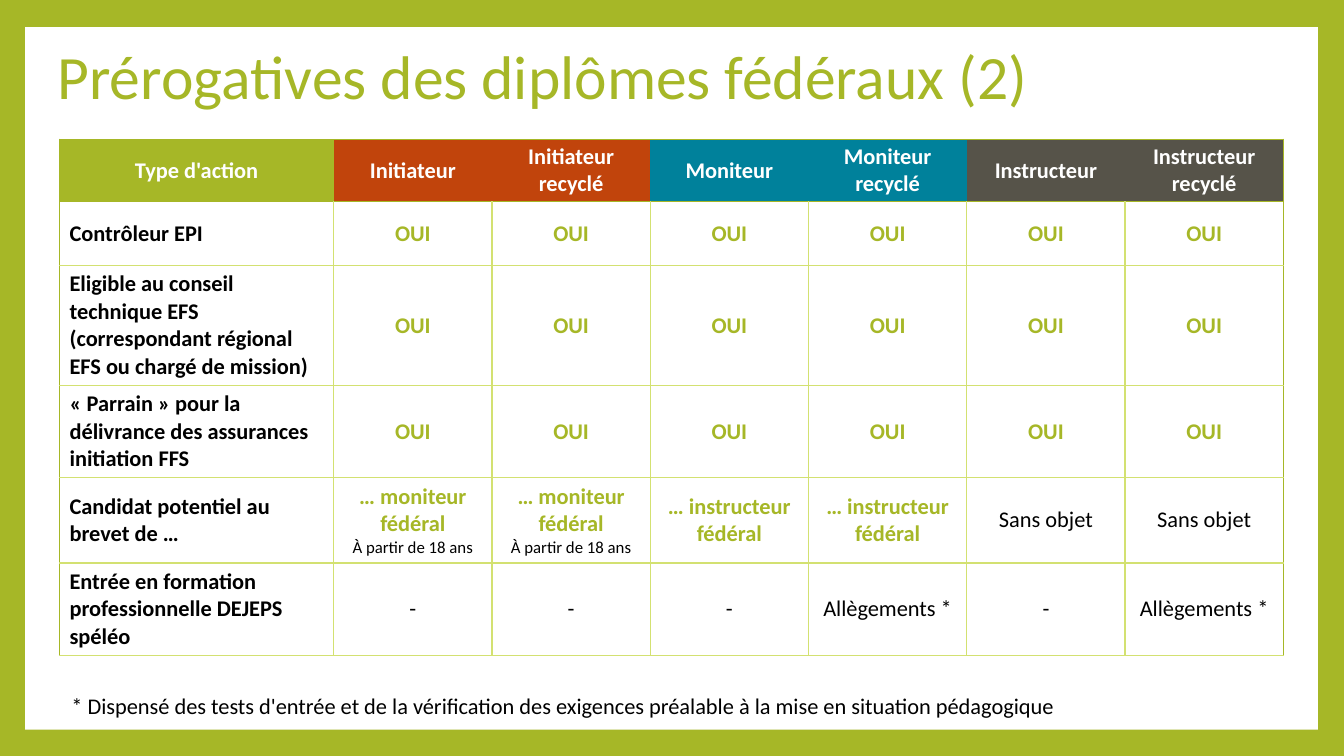
"""Builds the slide on the prerogatives of federal diplomas."""
from dataclasses import dataclass

from lxml import etree
from pptx import Presentation
from pptx.dml.color import RGBColor
from pptx.enum.shapes import MSO_SHAPE
from pptx.enum.text import MSO_ANCHOR, MSO_AUTO_SIZE, PP_ALIGN
from pptx.oxml.ns import qn
from pptx.util import Inches, Pt

RECTANGLE = MSO_SHAPE.RECTANGLE
MIDDLE = MSO_ANCHOR.MIDDLE
LEFT, CENTER = PP_ALIGN.LEFT, PP_ALIGN.CENTER
FIT_SHAPE, NO_FIT = MSO_AUTO_SIZE.SHAPE_TO_FIT_TEXT, MSO_AUTO_SIZE.NONE


@dataclass(frozen=True)
class Theme:
    font: str = "Calibri"
    green: str = "A6B727"
    grid: str = "D3E171"
    orange: str = "C1440C"
    blue: str = "00819B"
    grey: str = "565349"
    white: str = "FFFFFF"
    black: str = "000000"
    title_size: int = 44
    text_size: int = 16
    note_size: int = 12
    edge_width: float = 0.79
    grid_width: float = 1


THEME = Theme()
TITLE = "Prérogatives des diplômes fédéraux (2)"
FOOTNOTE = ("* Dispensé des tests d'entrée et de la vérification des exigences "
            "préalable à la mise en situation pédagogique")
HEADERS = [
    ("Type d'action", THEME.green),
    ("Initiateur", THEME.orange), ("Initiateur recyclé", THEME.orange),
    ("Moniteur", THEME.blue), ("Moniteur recyclé", THEME.blue),
    ("Instructeur", THEME.grey), ("Instructeur recyclé", THEME.grey),
]
MONITOR = "… moniteur fédéral\nÀ partir de 18 ans"
INSTRUCTOR = "… instructeur fédéral"
ACTIONS = [
    ("Contrôleur EPI", ["OUI"] * 6),
    ("Eligible au conseil technique EFS (correspondant régional "
     "EFS ou chargé de mission)", ["OUI"] * 6),
    ("« Parrain » pour la délivrance des assurances initiation FFS", ["OUI"] * 6),
    ("Candidat potentiel au brevet de …",
     [MONITOR] * 2 + [INSTRUCTOR] * 2 + ["Sans objet"] * 2),
    ("Entrée en formation professionnelle DEJEPS spéléo",
     ["-", "-", "-", "Allègements *", "-", "Allègements *"]),
]
COL_WIDTHS = [2.72] + [1.57] * 6
ROW_HEIGHTS = [0.61, 0.63, 1.19, 0.91, 0.84, 0.91]
HEADER_MARGINS = {"margin_left": 0.06, "margin_right": 0.06,
                  "margin_top": 0.04, "margin_bottom": 0.04}
EDGE = (THEME.green, THEME.edge_width)
GRID = (THEME.grid, THEME.grid_width)


def set_attrs(target, **values):
    for name, value in values.items():
        setattr(target, name, value)


def write(p, text, color, size=THEME.text_size, bold=False, align=LEFT):
    p.alignment = align
    r = p.add_run()
    r.text = text
    set_attrs(r.font, name=THEME.font, size=Pt(size), bold=bold)
    r.font.color.rgb = RGBColor.from_string(color)


def paint(fill, color):
    fill.solid()
    fill.fore_color.rgb = RGBColor.from_string(color)


def set_borders(cell, borders):
    tc_pr = cell._tc.get_or_add_tcPr()
    for side in "LRTB":
        ln = etree.SubElement(tc_pr, qn(f"a:ln{side}"))
        if borders[side] is None:
            etree.SubElement(ln, qn("a:noFill"))
            continue
        color, width = borders[side]
        ln.set("w", str(Pt(width)))
        solid = etree.SubElement(ln, qn("a:solidFill"))
        etree.SubElement(solid, qn("a:srgbClr"), val=color)


def cell_borders(row, col):
    inner = GRID if row else None
    return {"L": inner if col else EDGE,
            "R": EDGE if col == len(COL_WIDTHS) - 1 else inner,
            "T": GRID if row > 1 else EDGE,
            "B": GRID if row else EDGE}


def fill_header(cell, text, color):
    set_attrs(cell, **{k: Inches(v) for k, v in HEADER_MARGINS.items()})
    paint(cell.fill, color)
    write(cell.text_frame.paragraphs[0], text, THEME.white, bold=True, align=CENTER)


def fill_action(cell, text):
    cell.fill.background()
    write(cell.text_frame.paragraphs[0], text, THEME.black, bold=True)


def fill_right(cell, text):
    cell.fill.background()
    main, *notes = text.split("\n")
    granted = main == "OUI" or main.startswith("…")
    tf = cell.text_frame
    write(tf.paragraphs[0], main, THEME.green if granted else THEME.black,
          bold=granted, align=CENTER)
    for note in notes:
        write(tf.add_paragraph(), note, THEME.black, THEME.note_size, align=CENTER)


def add_title(s):
    title = s.shapes.title
    set_attrs(title, left=Inches(0.47), top=Inches(0.4),
              width=Inches(12.44), height=Inches(0.78))
    tf = title.text_frame
    set_attrs(tf, word_wrap=True, auto_size=NO_FIT, vertical_anchor=MIDDLE)
    p = tf.paragraphs[0]
    p.line_spacing = 0.9
    write(p, TITLE, THEME.green, THEME.title_size)


def add_panel(s):
    paint(s.background.fill, THEME.green)
    sp = s.shapes.add_shape(RECTANGLE, Inches(0.25), Inches(0.27),
                            Inches(12.82), Inches(6.97))
    sp.shadow.inherit = False
    paint(sp.fill, THEME.white)
    sp.line.fill.background()
    s.shapes.title._element.addprevious(sp._element)


def add_rights_table(s):
    table = s.shapes.add_table(
        len(ROW_HEIGHTS), len(COL_WIDTHS), Inches(0.59), Inches(1.38),
        Inches(sum(COL_WIDTHS)), Inches(sum(ROW_HEIGHTS))).table
    table.horz_banding = False
    for column, width in zip(table.columns, COL_WIDTHS):
        column.width = Inches(width)
    for row, height in zip(table.rows, ROW_HEIGHTS):
        row.height = Inches(height)
    for i, row in enumerate(table.rows):
        for j, cell in enumerate(row.cells):
            cell.vertical_anchor = MIDDLE
            set_borders(cell, cell_borders(i, j))
    for j, (text, color) in enumerate(HEADERS):
        fill_header(table.cell(0, j), text, color)
    for i, (action, rights) in enumerate(ACTIONS, 1):
        fill_action(table.cell(i, 0), action)
        for j, right in enumerate(rights, 1):
            fill_right(table.cell(i, j), right)


def add_footnote(s):
    sp = s.shapes.add_textbox(Inches(0.61), Inches(6.82), Inches(10.17), Inches(0.37))
    tf = sp.text_frame
    set_attrs(tf, word_wrap=False, auto_size=FIT_SHAPE)
    write(tf.paragraphs[0], FOOTNOTE, THEME.black)


def main():
    prs = Presentation()
    set_attrs(prs, slide_width=Inches(13.33), slide_height=Inches(7.5))
    s = prs.slides.add_slide(prs.slide_layouts[5])
    add_panel(s)
    add_title(s)
    add_rights_table(s)
    add_footnote(s)
    prs.save("out.pptx")


if __name__ == "__main__":
    main()
